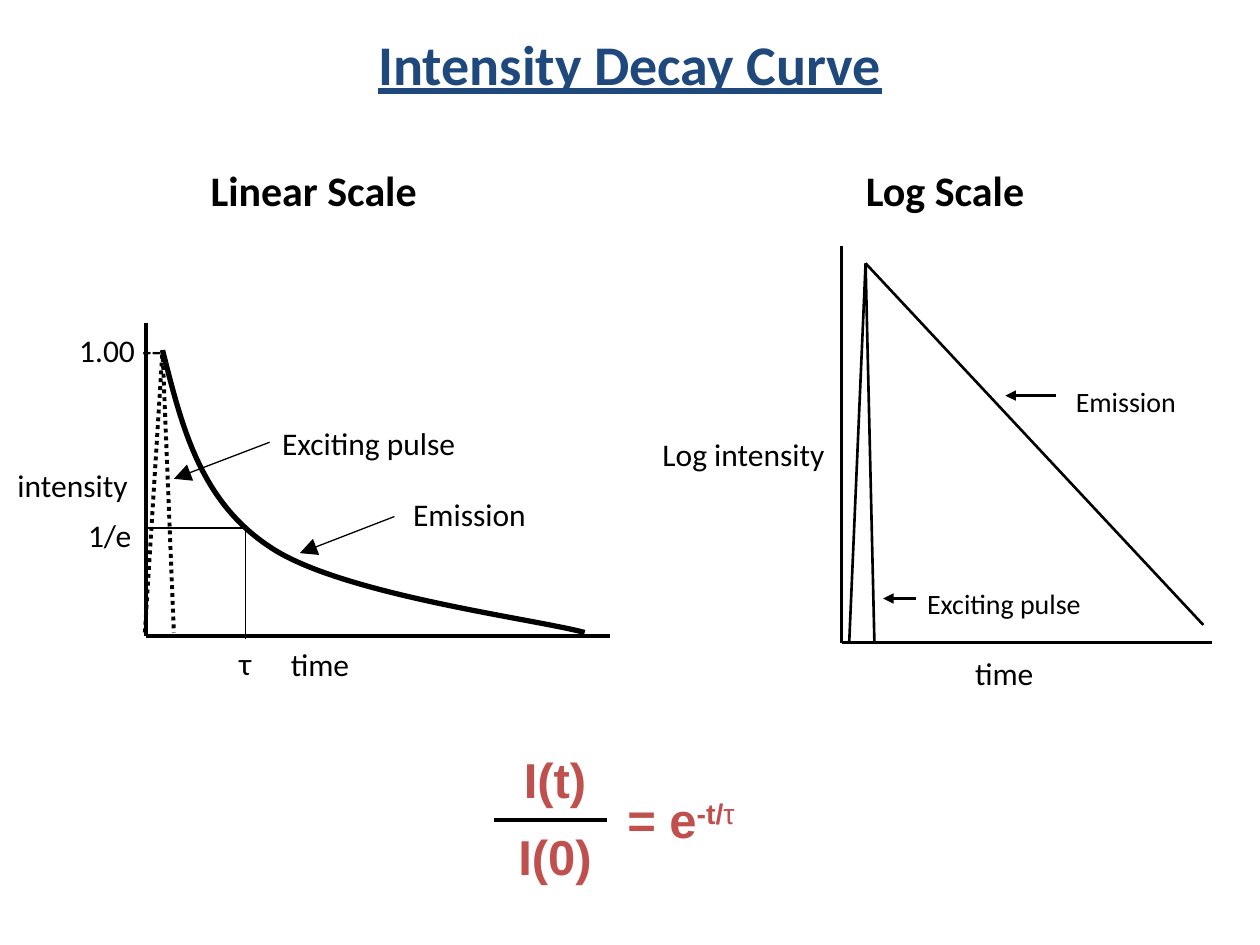
from typing import NamedTuple

from lxml import etree
from pptx import Presentation
from pptx.dml.color import RGBColor
from pptx.enum.dml import MSO_LINE
from pptx.enum.shapes import MSO_CONNECTOR
from pptx.enum.text import MSO_ANCHOR, MSO_AUTO_SIZE, PP_ALIGN
from pptx.oxml.ns import qn
from pptx.util import Inches, Pt

STRAIGHT = MSO_CONNECTOR.STRAIGHT
DOTTED = MSO_LINE.ROUND_DOT
LEFT, CENTER = PP_ALIGN.LEFT, PP_ALIGN.CENTER
MIDDLE = MSO_ANCHOR.MIDDLE
GROW = MSO_AUTO_SIZE.SHAPE_TO_FIT_TEXT
BLACK, NAVY, RED = "000000", "1F497D", "C0504D"


class Label(NamedTuple):
    text: str
    left: float
    top: float
    width: float
    height: float = 0.4
    size: float = 18
    font: str = "Calibri"
    color: str = BLACK
    bold: bool = False
    centered: bool = False


class Line(NamedTuple):
    x1: float
    y1: float
    x2: float
    y2: float
    weight: float
    dotted: bool = False
    arrow: str = ""  # arrowhead size at the end point: "med" or "lg"


LINEAR_LINES = [
    Line(1.16, 2.56, 1.16, 5.05, 2.25),
    Line(1.16, 5.05, 4.84, 5.05, 2.25),
    Line(1.15, 5.02, 1.29, 2.78, 2.25, dotted=True),
    Line(1.29, 2.78, 1.38, 5.02, 2.25, dotted=True),
    Line(1.15, 4.19, 1.95, 4.19, 0.75),
    Line(1.95, 4.19, 1.95, 5.07, 0.75),
    Line(3.13, 4.1, 2.38, 4.39, 0.75, arrow="lg"),
    Line(2.14, 3.51, 1.38, 3.8, 0.75, arrow="lg"),
]
LINEAR_LABELS = [
    Label("time", 2.21, 5.07, 0.67),
    Label("intensity", 0.04, 3.65, 1.09),
    Label("1.00 --", 0.53, 2.58, 0.86),
    Label("1/e", 0.6, 4.05, 0.55),
    Label("Exciting pulse", 2.14, 3.32, 1.59),
    Label("Emission", 3.18, 3.88, 1.11),
    Label("τ", 1.8, 5.06, 0.31),
]
# Start point, then two control points and an end point per Bézier segment
DECAY_CURVE = [
    (1.29, 2.78),
    (1.44, 3.37), (1.58, 3.97), (2.14, 4.34),
    (2.7, 4.72), (4.23, 4.91), (4.64, 5.02),
]
LOG_LINES = [
    Line(9.62, 5.1, 6.68, 5.1, 1.5),
    Line(6.68, 1.95, 6.68, 5.1, 1.5),
    Line(6.74, 5.1, 6.87, 2.09, 1.5),
    Line(6.87, 2.09, 6.94, 5.1, 1.5),
    Line(8.38, 3.14, 7.98, 3.14, 1.5, arrow="med"),
    Line(7.27, 4.75, 7.01, 4.75, 1.5, arrow="med"),
    Line(6.87, 2.09, 9.55, 4.96, 1.5),
]
LOG_LABELS = [
    Label("time", 7.64, 5.14, 0.68),
    Label("Log intensity", 5.16, 3.4, 1.53),
    Label("Exciting pulse", 7.26, 4.61, 1.48, 0.37, 16),
    Label("Emission", 8.44, 3, 1.03, 0.37, 16),
]
HEADINGS = [
    Label(text, left, 1.26, 2.58, 0.5, 24, bold=True, centered=True)
    for text, left in (("Linear Scale", 1.2), ("Log Scale", 6.21))
]
FORMULA_PARTS = [
    Label(text, left, top, width, 0.57, 28, "Arial", RED, True, True)
    for text, left, top, width in (
        ("= e", 4.67, 6.22, 1.47),
        ("I(t)", 3.8, 5.9, 1.21),
        ("I(0)", 3.92, 6.51, 0.97),
    )
]
FRACTION_BAR = Line(3.92, 6.51, 4.82, 6.51, 2.25)


def rgb(value: str) -> RGBColor:
    return RGBColor.from_string(value)


def style_font(font, label: Label) -> None:
    font.name, font.size, font.bold = label.font, Pt(label.size), label.bold
    font.color.rgb = rgb(label.color)


def add_label(shapes, label: Label):
    box = shapes.add_textbox(*map(Inches, label[1:5]))
    frame = box.text_frame
    frame.word_wrap = label.centered
    frame.auto_size = GROW
    para = frame.paragraphs[0]
    para.text = label.text
    para.alignment = CENTER if label.centered else LEFT
    style_font(para.font, label)
    return para


def add_line(shapes, line: Line) -> None:
    connector = shapes.add_connector(STRAIGHT, *map(Inches, line[:4]))
    connector.line.width = Pt(line.weight)
    connector.line.color.rgb = rgb(BLACK)
    if line.dotted:
        connector.line.dash_style = DOTTED
    properties = connector._element.spPr
    if line.arrow:
        outline = properties.find(qn("a:ln"))
        etree.SubElement(outline, qn("a:tailEnd"), type="triangle",
                         w=line.arrow, len=line.arrow)
    etree.SubElement(properties, qn("a:effectLst"))


def add_curve(shapes, points: list[tuple[float, float]], weight: float) -> None:
    start, *rest = [(Inches(x), Inches(y)) for x, y in points]
    builder = shapes.build_freeform(*start)
    builder.add_line_segments(rest, close=False)
    curve = builder.convert_to_shape()
    curve.shadow.inherit = False
    curve.fill.background()
    curve.line.width = Pt(weight)
    curve.line.color.rgb = rgb(BLACK)
    # Merge every three straight segments into one cubic Bézier segment
    outline = curve._element.spPr.find(".//" + qn("a:path"))
    segments = outline.findall(qn("a:lnTo"))
    for first in range(0, len(segments), 3):
        bezier = etree.SubElement(outline, qn("a:cubicBezTo"))
        for segment in segments[first:first + 3]:
            bezier.append(segment[0])
            outline.remove(segment)


def add_diagram(slide, lines: list[Line], labels: list[Label]):
    shapes = slide.shapes.add_group_shape().shapes
    for line in lines:
        add_line(shapes, line)
    for label in labels:
        add_label(shapes, label)
    return shapes


def add_title(slide) -> None:
    title = slide.shapes.title
    title.left, title.top, title.width, title.height = map(Inches, (0.5, 0, 9, 1))
    title.text_frame.vertical_anchor = MIDDLE
    para = title.text_frame.paragraphs[0]
    para.text = "Intensity Decay Curve"
    para.alignment = CENTER
    font = para.font
    font.name, font.size, font.bold, font.underline = "Calibri", Pt(32), True, True
    font.color.rgb = rgb(NAVY)


def add_formula(slide) -> None:
    shapes = slide.shapes.add_group_shape().shapes
    right_side, *_ = [add_label(shapes, part) for part in FORMULA_PARTS]
    for text, bold in (("-t/", True), ("τ", False)):
        span = right_side.add_run()
        span.text = text
        span.font.bold = bold
        span._r.get_or_add_rPr().set("baseline", "30000")
    add_line(shapes, FRACTION_BAR)


def main() -> None:
    deck = Presentation()
    deck.slide_width, deck.slide_height = Inches(10), Inches(7.5)
    slide = deck.slides.add_slide(deck.slide_layouts[5])

    # Title and diagram headings
    add_title(slide)
    for heading in HEADINGS:
        add_label(slide.shapes, heading)

    # Decay on linear and logarithmic scales
    linear = add_diagram(slide, LINEAR_LINES, LINEAR_LABELS)
    add_curve(linear, DECAY_CURVE, 3)
    add_diagram(slide, LOG_LINES, LOG_LABELS)

    # Decay law
    add_formula(slide)
    deck.save("out.pptx")


if __name__ == "__main__":
    main()
